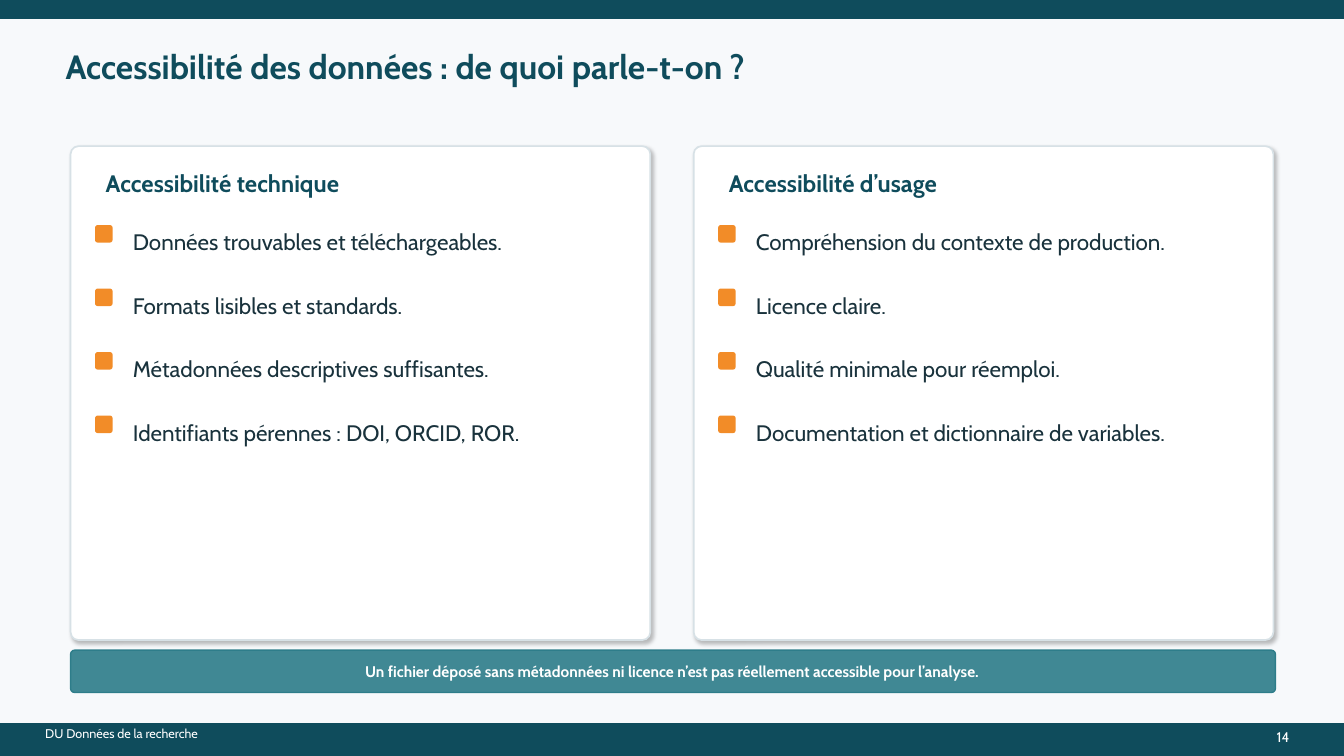
from lxml import etree
from pptx import Presentation
from pptx.dml.color import RGBColor
from pptx.enum import shapes, text
from pptx.oxml import ns
from pptx.util import Inches, Pt

COLOURS = {
    "background": "F7F9FB",
    "navy": "0F4C5C",
    "teal": "2E7D8A",
    "orange": "F28C28",
    "ink": "19323C",
    "border": "D7E1E6",
    "white": "FFFFFF",
    "shadow": "000000",
}
COLUMNS = {
    "Accessibilité technique": [
        "Données trouvables et téléchargeables.",
        "Formats lisibles et standards.",
        "Métadonnées descriptives suffisantes.",
        "Identifiants pérennes : DOI, ORCID, ROR.",
    ],
    "Accessibilité d’usage": [
        "Compréhension du contexte de production.",
        "Licence claire.",
        "Qualité minimale pour réemploi.",
        "Documentation et dictionnaire de variables.",
    ],
}
SLIDE_WIDTH, SLIDE_HEIGHT = 13.33, 7.5
FIRST_CARD_LEFT, CARD_STEP = 0.7, 6.18
FIRST_ITEM_TOP, ITEM_STEP = 2.18, 0.63


def rgb(name):
    return RGBColor.from_string(COLOURS[name])


class SlideBuilder:
    font = "Cabin"

    def __init__(self, slide):
        self.slide = slide
        slide.background.fill.solid()
        slide.background.fill.fore_color.rgb = rgb("background")

    def set_text(self, frame, words, size, colour, bold=False,
                 align=text.PP_ALIGN.LEFT, anchor=text.MSO_ANCHOR.MIDDLE):
        frame.word_wrap = True
        frame.auto_size = text.MSO_AUTO_SIZE.NONE
        frame.vertical_anchor = anchor
        paragraph = frame.paragraphs[0]
        paragraph.text = words
        paragraph.alignment = align
        font = paragraph.font
        font.name, font.size, font.bold = self.font, Pt(size), bold
        font.color.rgb = rgb(colour)

    def title(self, words, left, top, width, height):
        heading = self.slide.shapes.title
        heading.left, heading.top = Inches(left), Inches(top)
        heading.width, heading.height = Inches(width), Inches(height)
        self.set_text(heading.text_frame, words, 24, "navy", bold=True)

    def label(self, words, left, top, width, height, size, colour, **style):
        box = self.slide.shapes.add_textbox(
            Inches(left), Inches(top), Inches(width), Inches(height))
        self.set_text(box.text_frame, words, size, colour, **style)

    def block(self, left, top, width, height, fill, line=None, line_width=1,
              rounding=None):
        """Add a filled rectangle, with round corners if rounding is given."""
        kind = (shapes.MSO_SHAPE.RECTANGLE if rounding is None
                else shapes.MSO_SHAPE.ROUNDED_RECTANGLE)
        block = self.slide.shapes.add_shape(
            kind, Inches(left), Inches(top), Inches(width), Inches(height))
        if rounding is not None:
            block.adjustments[0] = rounding
        block.shadow.inherit = False
        block.fill.solid()
        block.fill.fore_color.rgb = rgb(fill)
        block.line.color.rgb = rgb(line or fill)
        block.line.width = Pt(line_width)
        return block

    def set_alpha(self, colour_element, percent):
        etree.SubElement(colour_element, ns.qn("a:alpha"), val=str(percent * 1000))

    def card(self, left, top, width, height):
        card = self.block(left, top, width, height, "white", "border", 1.2, 0.016)
        effects = card._element.spPr.find(ns.qn("a:effectLst"))
        shadow = etree.SubElement(
            effects, ns.qn("a:outerShdw"), blurRad=str(Pt(3)), dist=str(Pt(2)),
            dir=str(45 * 60000), algn="bl", rotWithShape="0")
        colour = etree.SubElement(
            shadow, ns.qn("a:srgbClr"), val=COLOURS["shadow"])
        self.set_alpha(colour, 25)

    def column(self, left, heading, items):
        self.card(left, 1.45, 5.75, 4.9)
        inner = left + 0.25
        self.label(heading, inner, 1.68, 5.1, 0.28, 17, "navy", bold=True)
        for row, item in enumerate(items):
            top = FIRST_ITEM_TOP + row * ITEM_STEP
            self.block(inner, top + 0.06, 0.16, 0.16, "orange", rounding=0.125)
            self.label(item, inner + 0.27, top, 4.9, 0.44, 16, "ink")

    def banner(self, words):
        banner = self.block(0.7, 6.45, 11.95, 0.42, "teal", rounding=0.095)
        fill = banner._element.spPr.find(ns.qn("a:solidFill"))
        self.set_alpha(fill[0], 91)
        self.label(words, 0.92, 6.57, 11.5, 0.18, 11, "white", bold=True,
                   align=text.PP_ALIGN.CENTER)


def main():
    deck = Presentation()
    deck.slide_width, deck.slide_height = Inches(SLIDE_WIDTH), Inches(SLIDE_HEIGHT)
    builder = SlideBuilder(deck.slides.add_slide(deck.slide_layouts[5]))

    builder.block(0, 0, SLIDE_WIDTH, 0.18, "navy")
    builder.block(0, 7.18, SLIDE_WIDTH, 0.32, "navy")
    builder.title("Accessibilité des données : de quoi parle-t-on ?",
                  0.55, 0.45, 8.7, 0.42)
    for index, (heading, items) in enumerate(COLUMNS.items()):
        builder.column(FIRST_CARD_LEFT + index * CARD_STEP, heading, items)
    builder.banner("Un fichier déposé sans métadonnées ni licence n’est pas "
                   "réellement accessible pour l’analyse.")
    builder.label("DU Données de la recherche", 0.35, 7.2, 3.4, 0.16, 9, "white")
    builder.label("14", 12.5, 7.18, 0.45, 0.2, 10, "white",
                  align=text.PP_ALIGN.CENTER, anchor=text.MSO_ANCHOR.TOP)
    deck.save("out.pptx")


if __name__ == "__main__":
    main()
